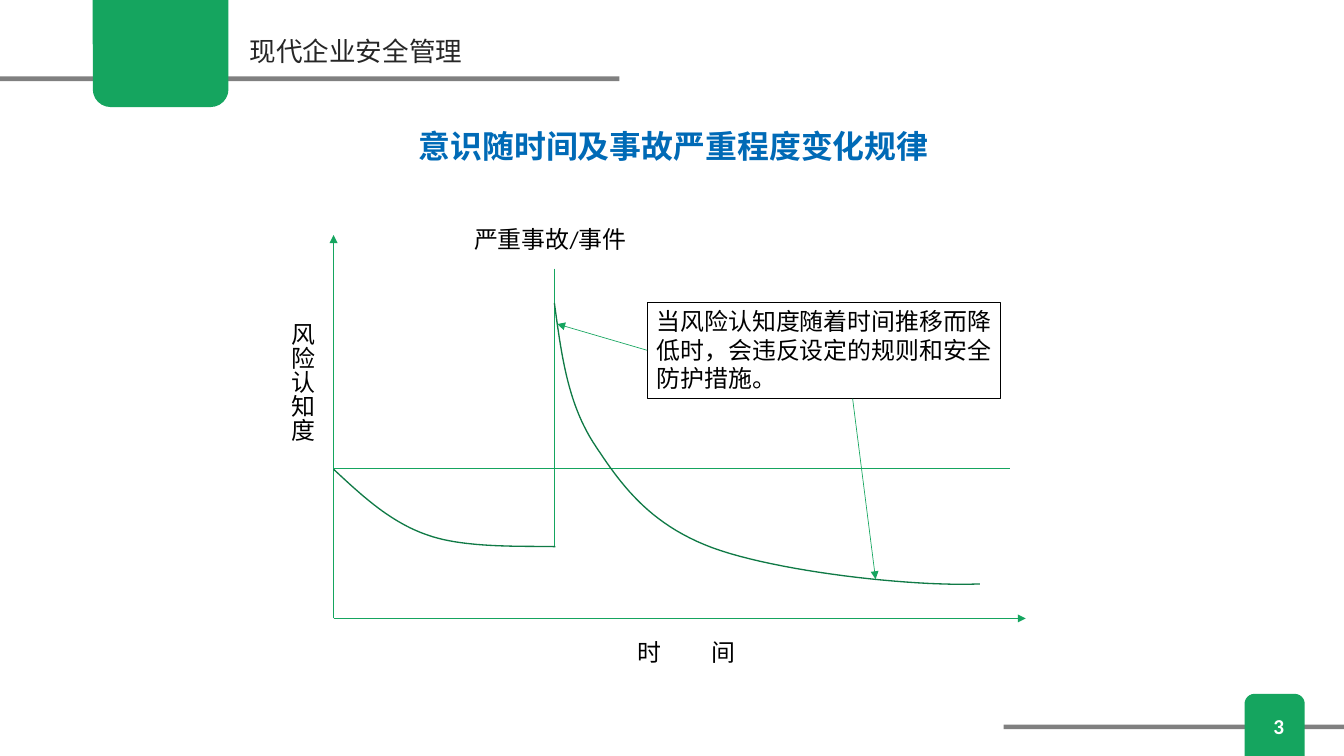
from lxml import etree
from pptx import Presentation
from pptx.dml.color import RGBColor
from pptx.enum.shapes import MSO_CONNECTOR, MSO_SHAPE
from pptx.enum.text import MSO_ANCHOR, MSO_AUTO_SIZE, PP_ALIGN
from pptx.oxml.ns import qn
from pptx.util import Inches, Pt

STRAIGHT = MSO_CONNECTOR.STRAIGHT
BAR = MSO_SHAPE.RECTANGLE
TAB = MSO_SHAPE.ROUND_2_SAME_RECTANGLE
TOP, MIDDLE = MSO_ANCHOR.TOP, MSO_ANCHOR.MIDDLE
LEFT, RIGHT = PP_ALIGN.LEFT, PP_ALIGN.RIGHT
FIXED = MSO_AUTO_SIZE.NONE

WIDTH, HEIGHT = Inches(14.06), Inches(7.91)
COLUMN, ROW = WIDTH / 100, HEIGHT / 100
LATIN, CJK = "Calibri", "Noto Sans CJK SC"
COLORS = {
    "green": "15A55F",
    "curve": "107A46",
    "gray": "808080",
    "heading": "262626",
    "title": "006AB6",
    "black": "000000",
    "white": "FFFFFF",
}

ORIGIN_X, ORIGIN_Y = 24.82, 81.8
ACCIDENT_X = 41.25
BASELINE_Y = 61.95
BAR_HEIGHT = 0.63
LABEL_SIZE = (13.44, 5.06)

DECLINE = [
    (ORIGIN_X, 62.07), (26.96, 65.61), (29.09, 69.15), (31.86, 70.8),
    (34.64, 72.57), (39.26, 72.19), (41.32, 72.31),
]
DECAY = [
    (ACCIDENT_X, 40.08), (41.75, 46.52), (42.18, 52.97), (44.1, 58.41),
    (46.09, 63.84), (48.22, 69.28), (52.99, 72.44),
    (57.82, 75.6), (67.78, 77.62), (72.9, 77.24),
]


def color(name):
    """Return the named colour."""
    return RGBColor.from_string(COLORS[name])


def place(column, row):
    """Turn a grid position or size into slide lengths."""
    return round(column * COLUMN), round(row * ROW)


def add_block(page, kind, left, top, width, height, fill, rotation=0):
    """Add a plain filled shape."""
    block = page.shapes.add_shape(kind, *place(left, top), *place(width, height))
    block.shadow.inherit = False
    block.rotation = rotation
    block.fill.solid()
    block.fill.fore_color.rgb = color(fill)
    block.line.fill.background()
    return block


def write(box, text, size, ink="black", bold=False, font=LATIN, align=LEFT, anchor=TOP):
    """Put one formatted paragraph into a box."""
    frame = box.text_frame
    frame.text = text
    frame.word_wrap = True
    frame.auto_size = FIXED
    frame.vertical_anchor = anchor
    para = frame.paragraphs[0]
    para.alignment = align
    span = para.runs[0]
    span.font.size = Pt(size)
    span.font.bold = bold
    span.font.color.rgb = color(ink)
    span.font.name = font
    etree.SubElement(span.font._element, qn("a:ea"), typeface=CJK)
    return span


def add_label(page, text, left, top, width, height, size=18, **style):
    """Add a text box and return it with its run."""
    box = page.shapes.add_textbox(*place(left, top), *place(width, height))
    return box, write(box, text, size, **style)


def add_line(page, start, end, arrow=False):
    """Add a thin green line, with an arrowhead at its end if asked."""
    line = page.shapes.add_connector(STRAIGHT, *place(*start), *place(*end))
    line.line.color.rgb = color("green")
    line.line.width = Pt(0.5)
    if arrow:
        etree.SubElement(line.line._get_or_add_ln(), qn("a:tailEnd"), type="triangle")
    etree.SubElement(line._element.spPr, qn("a:effectLst"))
    return line


def bezier(points, share):
    """Return the point at a share of a cubic curve."""
    rest = 1 - share
    weights = (rest**3, 3 * rest**2 * share, 3 * rest * share**2, share**3)
    return tuple(
        sum(weight * point[axis] for weight, point in zip(weights, points))
        for axis in (0, 1)
    )


def add_curve(page, points, steps=24):
    """Draw joined cubic curves as an open outline."""
    builder = page.shapes.build_freeform(*place(*points[0]), scale=1.0)
    vertices = [
        place(*bezier(points[first:first + 4], step / steps))
        for first in range(0, len(points) - 1, 3)
        for step in range(1, steps + 1)
    ]
    builder.add_line_segments(vertices, close=False)
    curve = builder.convert_to_shape()
    curve.shadow.inherit = False
    curve.fill.background()
    curve.line.color.rgb = color("curve")
    curve.line.width = Pt(1)


def add_frame(page):
    """Add the header and footer bands with the page number."""
    add_block(page, BAR, 0, 10.11, 46.09, BAR_HEIGHT, "gray")
    add_block(page, TAB, 6.9, 0, 10.1, 14.16, "green", rotation=180)
    add_block(page, BAR, 74.68, 95.83, 25.32, BAR_HEIGHT, "gray")
    add_block(page, TAB, 92.6, 91.78, 4.48, 8.22, "green")
    heading, _ = add_label(page, "现代企业安全管理", 18.07, 4.17, 17.43, 5.18,
                           size=20, ink="heading", font=CJK)
    frame = heading.text_frame
    frame.margin_left = frame.margin_right = Inches(0.07)
    frame.margin_top = frame.margin_bottom = Inches(0.04)
    add_label(page, "3", 73.76, 93.43, 22.48, 5.31, size=16, ink="white",
              bold=True, align=RIGHT, anchor=MIDDLE)


def add_title(page, text):
    """Place and format the title."""
    title = page.shapes.title
    title.left, title.top = place(30.44, 16.18)
    title.width, title.height = place(40.9, 6.32)
    write(title, text, 24, ink="title", bold=True)


def add_diagram(page):
    """Draw the axes, the reference lines and both curves."""
    origin = (ORIGIN_X, ORIGIN_Y)
    add_line(page, origin, (ORIGIN_X, 31.1), arrow=True)
    add_line(page, origin, (76.32, ORIGIN_Y), arrow=True)
    add_line(page, (ORIGIN_X, BASELINE_Y), (75.18, BASELINE_Y))
    add_line(page, (ACCIDENT_X, 35.52), (ACCIDENT_X, 72.31))
    for points in (DECLINE, DECAY):
        add_curve(page, points)


def add_callout(page):
    """Add the explanation and its two arrows."""
    callout = add_block(page, BAR, 48.15, 39.95, 26.32, 12.77, "white")
    callout.fill.background()
    callout.line.color.rgb = color("black")
    callout.line.width = Pt(0.75)
    write(callout, "当风险认知度随着时间推移而降低时，会违反设定的规则和安全防护措施。", 18)
    pointer = add_line(page, (48.15, 46.33), (41.46, 42.86), arrow=True)
    pointer.begin_connect(callout, 1)
    add_line(page, (63.44, 52.72), (65.15, 76.61), arrow=True)


def add_labels(page):
    """Name the axes and the accident."""
    _, time = add_label(page, "时 间", 46.73, 83.69, *LABEL_SIZE)
    time.font._element.set("spc", "1680")
    awareness, _ = add_label(page, "风险认知度", 20.34, 41.47, 3.56, 32.11)
    awareness.text_frame._txBody.bodyPr.set("vert", "eaVert")
    add_label(page, "严重事故/事件", 34.57, 29.08, *LABEL_SIZE)


def main():
    """Build and save the deck."""
    deck = Presentation()
    deck.slide_width, deck.slide_height = WIDTH, HEIGHT
    page = deck.slides.add_slide(deck.slide_layouts[5])
    add_frame(page)
    add_title(page, "意识随时间及事故严重程度变化规律")
    add_diagram(page)
    add_callout(page)
    add_labels(page)
    deck.save("out.pptx")


if __name__ == "__main__":
    main()
